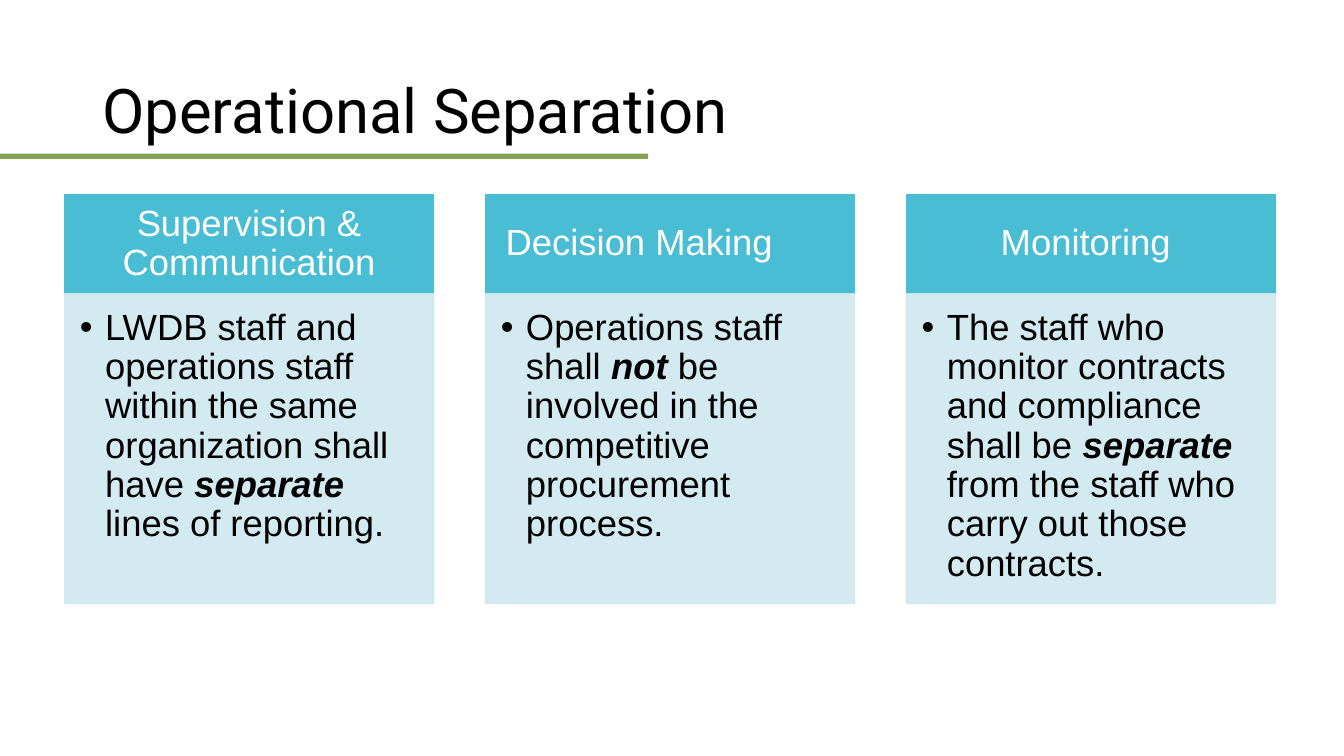
from dataclasses import dataclass
from lxml.etree import SubElement
from pptx import Presentation
from pptx.dml.color import RGBColor
from pptx.enum.shapes import MSO_SHAPE
from pptx.enum.text import MSO_ANCHOR as Anchor, MSO_AUTO_SIZE as AutoSize, PP_ALIGN as Align
from pptx.oxml.ns import qn
from pptx.util import Pt

TITLE = "Operational Separation"
COLUMNS = [
    ("Supervision & Communication", Align.CENTER,
     ("LWDB staff and operations staff within the same organization shall have ",
      "separate", " lines of reporting.")),
    ("Decision Making", Align.LEFT,
     ("Operations staff shall ", "not",
      " be involved in the competitive procurement process.")),
    ("Monitoring ", Align.CENTER,
     ("The staff who monitor contracts and compliance shall be ", "separate",
      " from the staff who carry out those contracts.")),
]


@dataclass(frozen=True)
class Theme:
    """Colours, fonts and type sizes of the slide."""
    rule: str = "85A051"
    header: str = "48BDD4"
    panel: str = "CFE8EF"
    dark: str = "000000"
    light: str = "FFFFFF"
    title_font: str = "Roboto"
    text_font: str = "Arial"
    title_size: int = 44
    text_size: int = 26


THEME = Theme()
LEFT, PITCH, WIDTH = 46.2, 300.6, 263.6
TOP, HEADER_H, PANEL_H = 139.1, 70.7, 221.2


def put_text(tf, parts, *, size=THEME.text_size, font=THEME.text_font, color=THEME.dark,
             align=Align.LEFT, anchor=Anchor.MIDDLE, insets=(7.2, 3.6, 7.2, 3.6), bullet=False):
    """Write one paragraph in which every second part is bold italic."""
    tf.word_wrap, tf.auto_size, tf.vertical_anchor = True, AutoSize.NONE, anchor
    tf.margin_left, tf.margin_top, tf.margin_right, tf.margin_bottom = map(Pt, insets)
    p = tf.paragraphs[0]
    if bullet:
        pPr = p._p.get_or_add_pPr()
        pPr.set("marL", str(Pt(18)))
        pPr.set("indent", str(Pt(-18)))
        SubElement(pPr, qn("a:buFont"), typeface="Arial")
        SubElement(pPr, qn("a:buChar"), char="•")
    p.alignment, p.line_spacing = align, 0.9
    for i, part in enumerate(parts):
        r = p.add_run()
        r.text = part
        r.font.name, r.font.size = font, Pt(size)
        r.font.color.rgb = RGBColor.from_string(color)
        r.font.bold = r.font.italic = i % 2 == 1


def add_box(s, x, y, w, h, color, *, outlined=True, alpha=100):
    """Add a flat rectangle and return it."""
    sp = s.shapes.add_shape(MSO_SHAPE.RECTANGLE, Pt(x), Pt(y), Pt(w), Pt(h))
    sp.shadow.inherit = False
    sp.fill.solid()
    sp.fill.fore_color.rgb = RGBColor.from_string(color)
    if outlined:
        sp.line.color.rgb = RGBColor.from_string(color)
        sp.line.width = Pt(1)
    else:
        sp.line.fill.background()
    if alpha < 100:
        for clr in sp._element.spPr.iter(qn("a:srgbClr")):
            SubElement(clr, qn("a:alpha"), val=str(alpha * 1000))
    return sp


def main():
    """Build the slide and save it."""
    prs = Presentation()
    prs.slide_width, prs.slide_height = Pt(960), Pt(540)
    s = prs.slides.add_slide(prs.slide_layouts[5])
    add_box(s, 0, 109.7, 463, 3.8, THEME.rule, outlined=False)
    title = s.shapes.title
    title.left, title.top, title.width, title.height = Pt(66), Pt(28.8), Pt(828), Pt(104.4)
    put_text(title.text_frame, [TITLE], size=THEME.title_size, font=THEME.title_font)
    for i, (heading, align, parts) in enumerate(COLUMNS):
        x = LEFT + i * PITCH
        header = add_box(s, x, TOP, WIDTH, HEADER_H, THEME.header)
        put_text(header.text_frame, [heading], color=THEME.light, align=align,
                 insets=(14.4, 8.2, 14.4, 8.2))
        panel = add_box(s, x, TOP + HEADER_H, WIDTH, PANEL_H, THEME.panel, alpha=90)
        put_text(panel.text_frame, parts, anchor=Anchor.TOP,
                 insets=(10.9, 10.9, 14.4, 16.4), bullet=True)
    prs.save("out.pptx")


if __name__ == "__main__":
    main()
